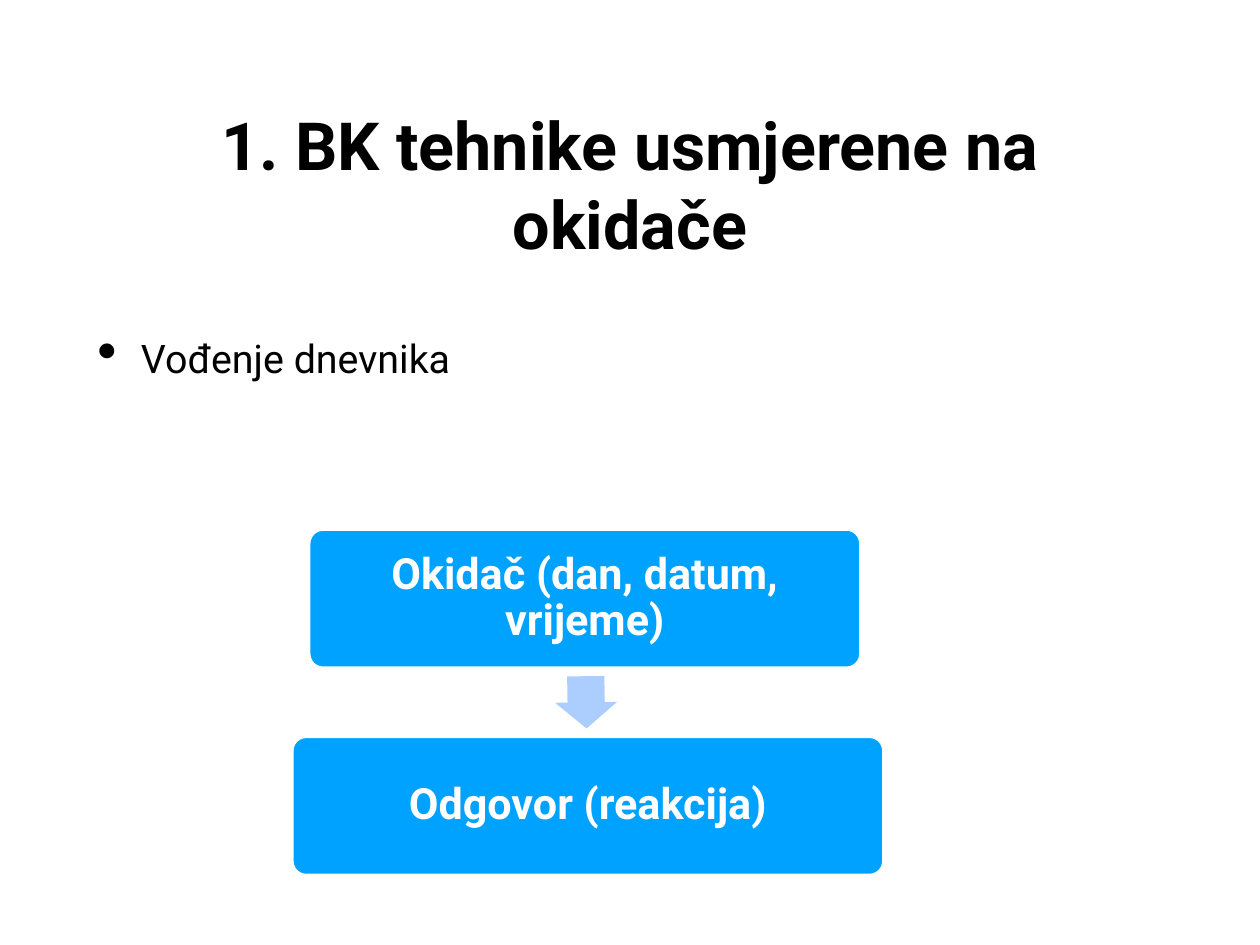
import dataclasses

import pptx
import pptx.dml.color
import pptx.enum.shapes
import pptx.enum.text
import pptx.util
import lxml.etree

Inches = pptx.util.Inches
Pt = pptx.util.Pt
Shape = pptx.enum.shapes.MSO_SHAPE
Align = pptx.enum.text.PP_ALIGN


@dataclasses.dataclass(frozen=True)
class Theme:
    font: str = "Roboto"
    black: str = "000000"
    white: str = "FFFFFF"
    blue: str = "00A2FF"
    pale: str = "ABCEFF"
    title: int = 54
    body: int = 32
    label: int = 35


def color(code):
    return pptx.dml.color.RGBColor.from_string(code)


def write(frame, text, *, font, size, ink, bold=False, align=Align.LEFT,
          inset=0.06, spacing=None, bullet=False):
    frame.word_wrap = True
    frame.vertical_anchor = pptx.enum.text.MSO_ANCHOR.MIDDLE
    frame.margin_left = frame.margin_right = Inches(inset)
    frame.margin_top = frame.margin_bottom = Inches(inset)
    para = frame.paragraphs[0]
    para.text = text
    para.alignment = align
    if spacing:
        para.line_spacing = spacing
    if bullet:
        props = para._p.get_or_add_pPr()
        props.set("marL", str(Inches(0.49)))
        props.set("indent", str(-Inches(0.49)))
        space = pptx.oxml.ns.qn
        lxml.etree.SubElement(props, space("a:buSzPct"), val="145000")
        lxml.etree.SubElement(props, space("a:buChar"), char="•")
    para.font.name = font
    para.font.size = Pt(size)
    para.font.bold = bold
    para.font.color.rgb = color(ink)


class Deck:
    def __init__(self, theme):
        self.theme = theme
        self.show = pptx.Presentation()
        self.show.slide_width = Inches(14.22)
        self.show.slide_height = Inches(10.67)
        self.slide = self.show.slides.add_slide(self.show.slide_layouts[6])

    def text(self, text, box, size, **form):
        area = self.slide.shapes.add_textbox(*map(Inches, box))
        write(area.text_frame, text, font=self.theme.font, size=size,
              ink=self.theme.black, **form)

    def shape(self, kind, box, fill, ratios):
        item = self.slide.shapes.add_shape(kind, *map(Inches, box))
        item.shadow.inherit = False
        item.fill.solid()
        item.fill.fore_color.rgb = color(fill)
        item.line.fill.background()
        for spot, ratio in enumerate(ratios):
            item.adjustments[spot] = ratio
        return item

    def card(self, text, box):
        look = self.theme
        item = self.shape(Shape.ROUNDED_RECTANGLE, box, look.blue, [0.1])
        item.line.color.rgb = color(look.white)
        item.line.width = Pt(2)
        write(item.text_frame, text, font=look.font, size=look.label,
              ink=look.white, bold=True, align=Align.CENTER,
              inset=0.15, spacing=0.9)

    def arrow(self, box, turn):
        item = self.shape(Shape.RIGHT_ARROW, box, self.theme.pale, [0.6, 0.5])
        item.rotation = turn


def main():
    theme = Theme()
    deck = Deck(theme)
    deck.text("1. BK tehnike usmjerene na okidače", (1.04, 0.89, 12.14, 2.36),
              theme.title, bold=True, align=Align.CENTER)
    deck.text("Vođenje dnevnika", (1.04, 3.69, 12.14, 0.7),
              theme.body, bullet=True)
    deck.card("Okidač (dan, datum, vrijeme)", (3.49, 5.98, 6.22, 1.56))
    deck.arrow((6.32, 7.58, 0.59, 0.7), 89.1)
    deck.card("Odgovor (reakcija)", (3.3, 8.32, 6.67, 1.56))
    deck.show.save("out.pptx")


if __name__ == "__main__":
    main()
